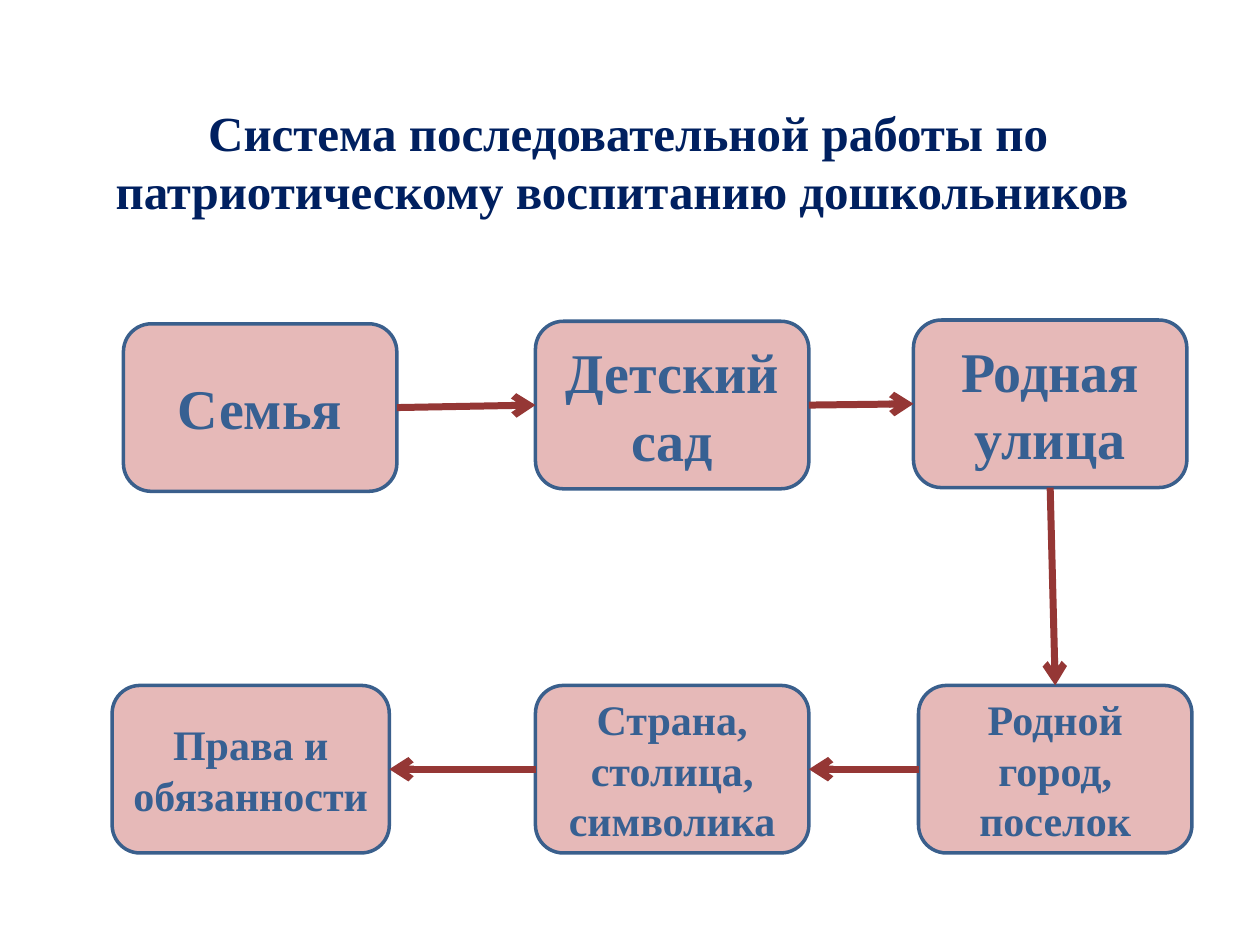
"""Build a slide showing the stages of patriotic education as a chain of boxes."""
from lxml import etree
from pptx import Presentation
from pptx.dml.color import RGBColor
from pptx.enum.shapes import MSO_CONNECTOR, MSO_SHAPE
from pptx.enum.text import MSO_ANCHOR, MSO_AUTO_SIZE, PP_ALIGN
from pptx.oxml.ns import qn
from pptx.util import Inches, Pt

STRAIGHT = MSO_CONNECTOR.STRAIGHT
ROUNDED = MSO_SHAPE.ROUNDED_RECTANGLE
TOP_ANCHOR, MIDDLE = MSO_ANCHOR.TOP, MSO_ANCHOR.MIDDLE
NO_AUTOFIT = MSO_AUTO_SIZE.NONE
CENTER = PP_ALIGN.CENTER
TOP, LEFT, BOTTOM, RIGHT = range(4)

THEME = {
    "font": "Times New Roman",
    "title": RGBColor.from_string("002060"),
    "text": RGBColor.from_string("376092"),
    "fill": RGBColor.from_string("E6B9B8"),
    "border": RGBColor.from_string("3A5F8C"),
    "arrow": RGBColor.from_string("953735"),
    "title_size": Pt(28),
    "large": Pt(32),
    "small": Pt(24),
    "border_width": Pt(2),
    "arrow_width": Pt(4),
}


def write_text(shape, text, size, color, anchor):
    frame = shape.text_frame
    settings = {"word_wrap": True, "auto_size": NO_AUTOFIT, "vertical_anchor": anchor}
    for name, value in settings.items():
        setattr(frame, name, value)
    paragraph = frame.paragraphs[0]
    paragraph.text = text
    paragraph.alignment = CENTER
    font = paragraph.runs[0].font
    for name, value in {"name": THEME["font"], "size": size, "bold": True}.items():
        setattr(font, name, value)
    font.color.rgb = color


presentation = Presentation()
presentation.slide_width = Inches(10)
presentation.slide_height = Inches(7.5)
slide = presentation.slides.add_slide(presentation.slide_layouts[5])

title = slide.shapes.title
position = {"left": 0.2, "top": 0.76, "width": 9.57, "height": 1.04}
for name, value in position.items():
    setattr(title, name, Inches(value))
write_text(
    title,
    "Система последовательной работы по патриотическому воспитанию дошкольников ",
    THEME["title_size"], THEME["title"], TOP_ANCHOR,
)

box_width, box_height, lower_row = 2.17, 1.33, 5.44
stages = [
    ("Семья", 0.98, 2.57, box_width, "large"),
    ("Детский сад", 4.25, 2.55, box_width, "large"),
    ("Родная улица", 7.25, 2.54, box_width, "large"),
    ("Родной город, поселок", 7.29, lower_row, box_width, "small"),
    ("Страна, столица, символика", 4.25, lower_row, box_width, "small"),
    ("Права и обязанности", 0.89, lower_row, 2.2, "small"),
]
boxes = []
for text, left, top, width, size in stages:
    box = slide.shapes.add_shape(
        ROUNDED, Inches(left), Inches(top), Inches(width), Inches(box_height)
    )
    box.shadow.inherit = False
    box.fill.solid()
    box.fill.fore_color.rgb = THEME["fill"]
    box.line.color.rgb = THEME["border"]
    box.line.width = THEME["border_width"]
    write_text(box, text, THEME[size], THEME["text"], MIDDLE)
    boxes.append(box)

joints = [(RIGHT, LEFT), (RIGHT, LEFT), (BOTTOM, TOP), (LEFT, RIGHT), (LEFT, RIGHT)]
for start, end, (start_side, end_side) in zip(boxes, boxes[1:], joints):
    arrow = slide.shapes.add_connector(STRAIGHT, 0, 0, 0, 0)
    arrow.begin_connect(start, start_side)
    arrow.end_connect(end, end_side)
    arrow.line.color.rgb = THEME["arrow"]
    arrow.line.width = THEME["arrow_width"]
    properties = arrow.line._get_or_add_ln()
    etree.SubElement(properties, qn("a:tailEnd"), type="arrow")
    etree.SubElement(properties.getparent(), qn("a:effectLst"))

presentation.save("out.pptx")
